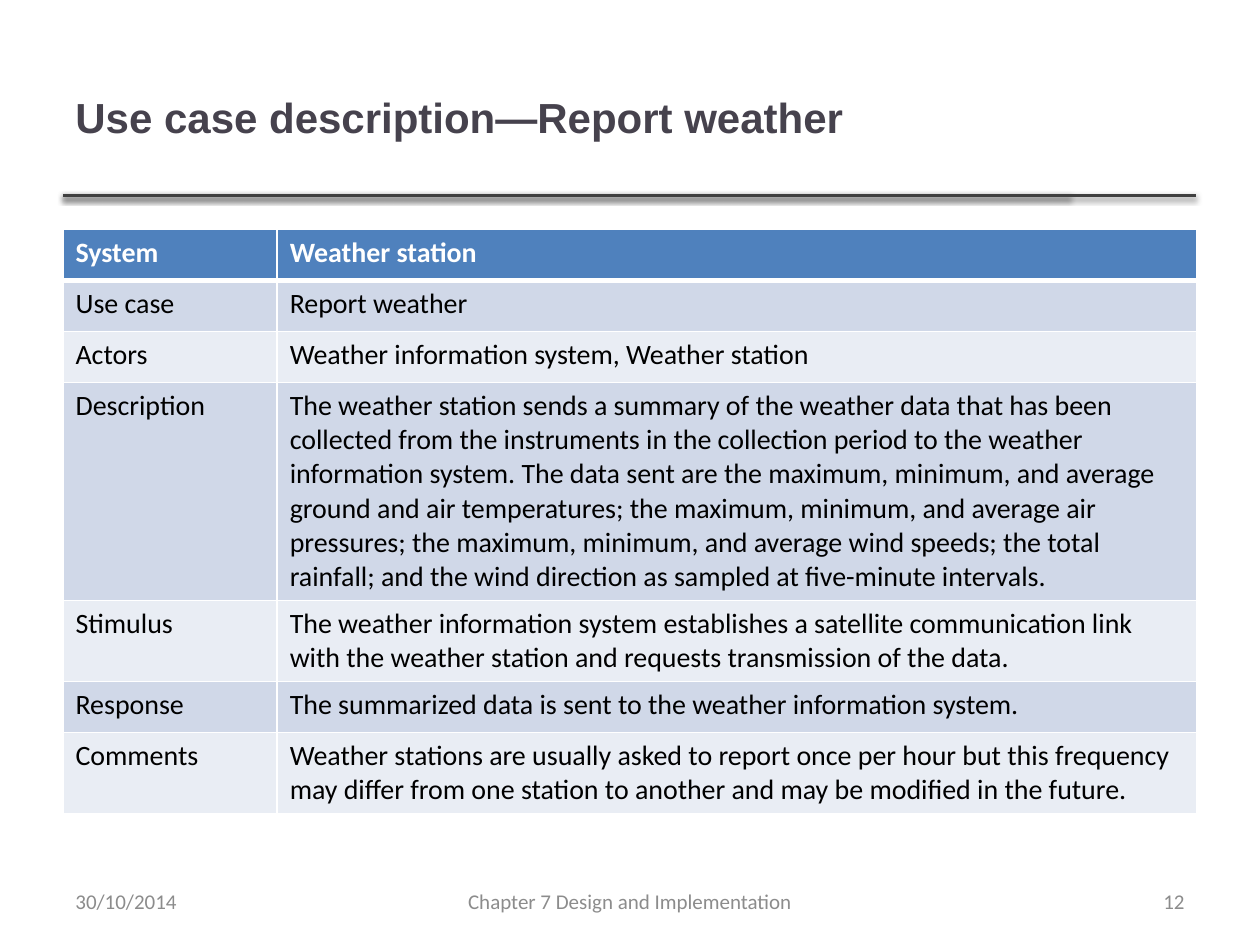
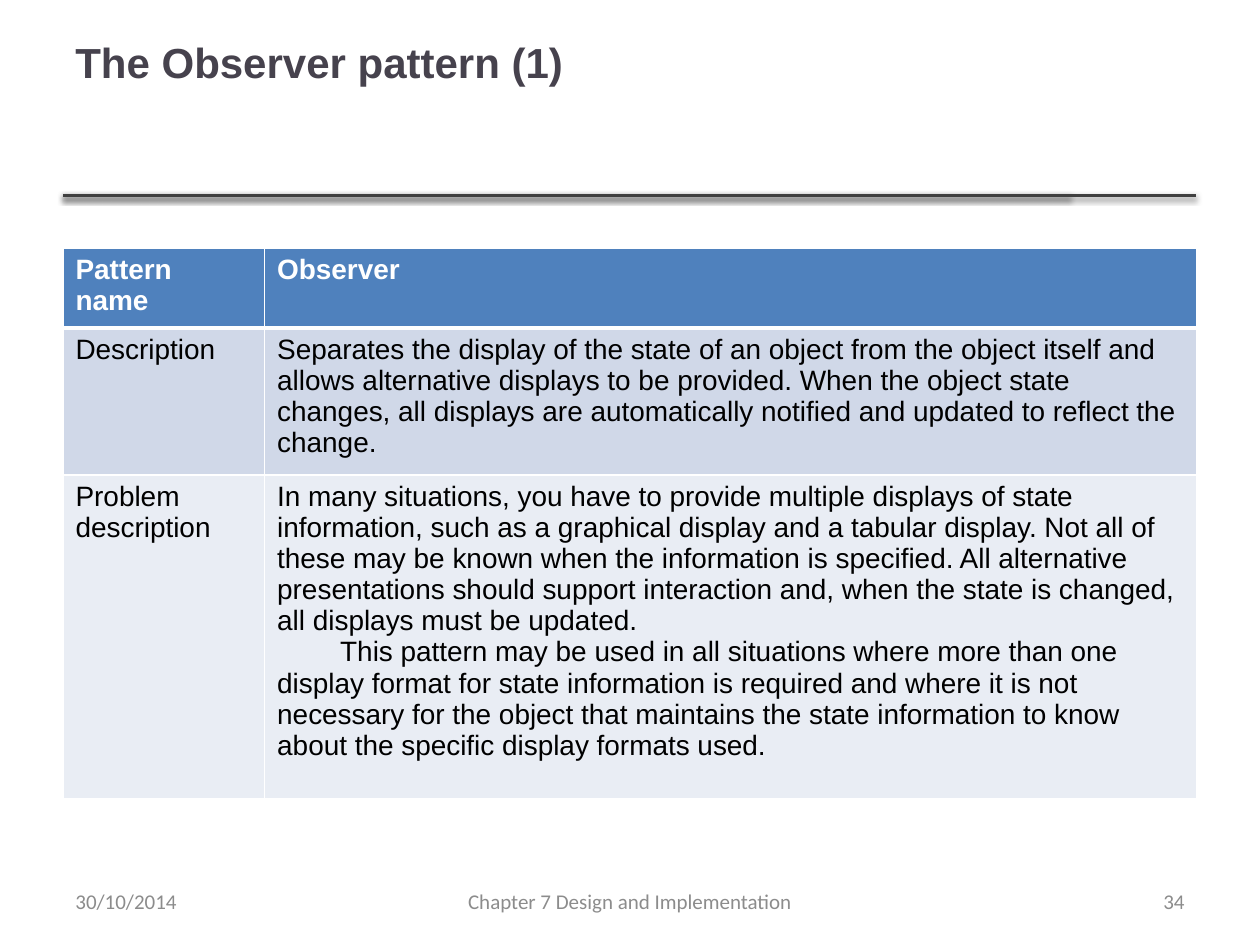
import pptx
import pptx.util
import pptx.dml.color
import pptx.enum.shapes
import pptx.enum.text
import pptx.oxml

Pt = pptx.util.Pt
RGB = pptx.dml.color.RGBColor.from_string
ALIGN = pptx.enum.text.PP_ALIGN
MIDDLE = pptx.enum.text.MSO_ANCHOR.MIDDLE
NS = 'xmlns:a="http://schemas.openxmlformats.org/drawingml/2006/main"'

COLORS = {
    "title": "46424D",
    "rule": "404040",
    "footer": "8C8C8C",
    "header": "4F81BD",
    "odd": "D0D8E8",
    "even": "E9EDF4",
    "white": "FFFFFF",
    "black": "000000",
}
LEFT, WIDTH = 36, 648

SHADOW = f"""<a:effectLst {NS}>
  <a:outerShdw blurRad="{Pt(3.1)}" dist="{Pt(1.6)}" dir="5400000" rotWithShape="0">
    <a:srgbClr val="{COLORS['black']}"><a:alpha val="38000"/></a:srgbClr>
  </a:outerShdw>
</a:effectLst>"""

slides = [
    {
        "title": "Use case description—Report weather",
        "title_box": (21.6, 90),
        "number": "12",
        "font": "Calibri",
        "table_top": 131,
        "columns": (122.4, 525.6),
        "heights": (29.2, 29.2, 29.2, 124.5, 46.3, 29.2, 46.3),
        "rows": [
            ("System", "Weather station"),
            ("Use case", "Report weather"),
            ("Actors", "Weather information system, Weather station"),
            ("Description",
             "The weather station sends a summary of the weather data that has been "
             "collected from the instruments in the collection period to the weather "
             "information system. The data sent are the maximum, minimum, and average "
             "ground and air temperatures; the maximum, minimum, and average air "
             "pressures; the maximum, minimum, and average wind speeds; the total "
             "rainfall; and the wind direction as sampled at five-minute intervals."),
            ("Stimulus",
             "The weather information system establishes a satellite communication link "
             "with the weather station and requests transmission of the data."),
            ("Response", "The summarized data is sent to the weather information system."),
            ("Comments",
             "Weather stations are usually asked to report once per hour but this frequency "
             "may differ from one station to another and may be modified in the future."),
        ],
    },
    {
        "title": "The Observer pattern (1)",
        "title_box": (0, 70),
        "number": "34",
        "font": "Arial",
        "table_top": 141.8,
        "columns": (115.2, 532.8),
        "heights": (42, 78.5, 185),
        "rows": [
            ("Pattern name", "Observer"),
            ("Description",
             "Separates the display of the state of an object from the object itself and "
             "allows alternative displays to be provided. When the object state changes, "
             "all displays are automatically notified and updated to reflect the change."),
            ("Problem description",
             "In many situations, you have to provide multiple displays of state "
             "information, such as a graphical display and a tabular display. Not all of "
             "these may be known when the information is specified. All alternative "
             "presentations should support interaction and, when the state is changed, "
             "all displays must be updated.\n"
             "This pattern may be used in all situations where more than one display "
             "format for state information is required and where it is not necessary for "
             "the object that maintains the state information to know about the specific "
             "display formats used."),
        ],
    },
]


def add_run(p, text, size, font, color, bold=False):
    r = p.add_run()
    r.text = text
    r.font.size = Pt(size)
    r.font.name = font
    r.font.bold = bold
    r.font.color.rgb = RGB(COLORS[color])


def add_line_of_text(s, box, align, *style):
    """Add a vertically centred text box holding one run."""
    tf = s.shapes.add_textbox(*map(Pt, box)).text_frame
    tf.word_wrap = True
    tf.vertical_anchor = MIDDLE
    tf.paragraphs[0].alignment = align
    add_run(tf.paragraphs[0], *style)


prs = pptx.Presentation()
prs.slide_width, prs.slide_height = Pt(720), Pt(540)

for content in slides:
    s = prs.slides.add_slide(prs.slide_layouts[6])

    # Double rule under the title
    for right in (611.3, 683.3):
        rule = s.shapes.add_connector(pptx.enum.shapes.MSO_CONNECTOR.STRAIGHT,
                                      Pt(LEFT), Pt(111.6), Pt(right), Pt(111.6))
        rule.line.color.rgb = RGB(COLORS["rule"])
        rule.line.width = Pt(2)
        rule._element.spPr.append(pptx.oxml.parse_xml(SHADOW))

    top, height = content["title_box"]
    add_line_of_text(s, (LEFT, top, WIDTH, height), ALIGN.LEFT,
                     content["title"], 24, "Arial", "title", True)

    # Table
    rows, heights = content["rows"], content["heights"]
    table = s.shapes.add_table(len(rows), 2, Pt(LEFT), Pt(content["table_top"]),
                               Pt(WIDTH), Pt(sum(heights))).table
    for column, width in zip(table.columns, content["columns"]):
        column.width = Pt(width)
    for i, (texts, height) in enumerate(zip(rows, heights)):
        table.rows[i].height = Pt(height)
        is_header = i == 0
        for j, text in enumerate(texts):
            cell = table.cell(i, j)
            cell.fill.solid()
            fill = "header" if is_header else ("even", "odd")[i % 2]
            cell.fill.fore_color.rgb = RGB(COLORS[fill])
            for k, paragraph in enumerate(text.split("\n")):
                p = cell.text_frame.add_paragraph() if k else cell.text_frame.paragraphs[0]
                if k:
                    p._p.get_or_add_pPr().set("indent", str(Pt(36)))
                add_run(p, paragraph, 16, content["font"],
                        "white" if is_header else "black", is_header)
            for k, side in enumerate("LRTB"):
                thick = (is_header and side == "B") or (i == 1 and side == "T")
                border = pptx.oxml.parse_xml(
                    f'<a:ln{side} {NS} w="{Pt(3 if thick else 1)}"><a:solidFill>'
                    f'<a:srgbClr val="{COLORS["white"]}"/></a:solidFill></a:ln{side}>')
                cell._tc.get_or_add_tcPr().insert(k, border)

    # Footer
    for left, width, align, text in (
        (LEFT, 168, ALIGN.LEFT, "30/10/2014"),
        (246, 228, ALIGN.CENTER, "Chapter 7 Design and Implementation"),
        (516, 168, ALIGN.RIGHT, content["number"]),
    ):
        add_line_of_text(s, (left, 500.5, width, 28.75), align, text, 12, "Calibri", "footer")

prs.save("out.pptx")
